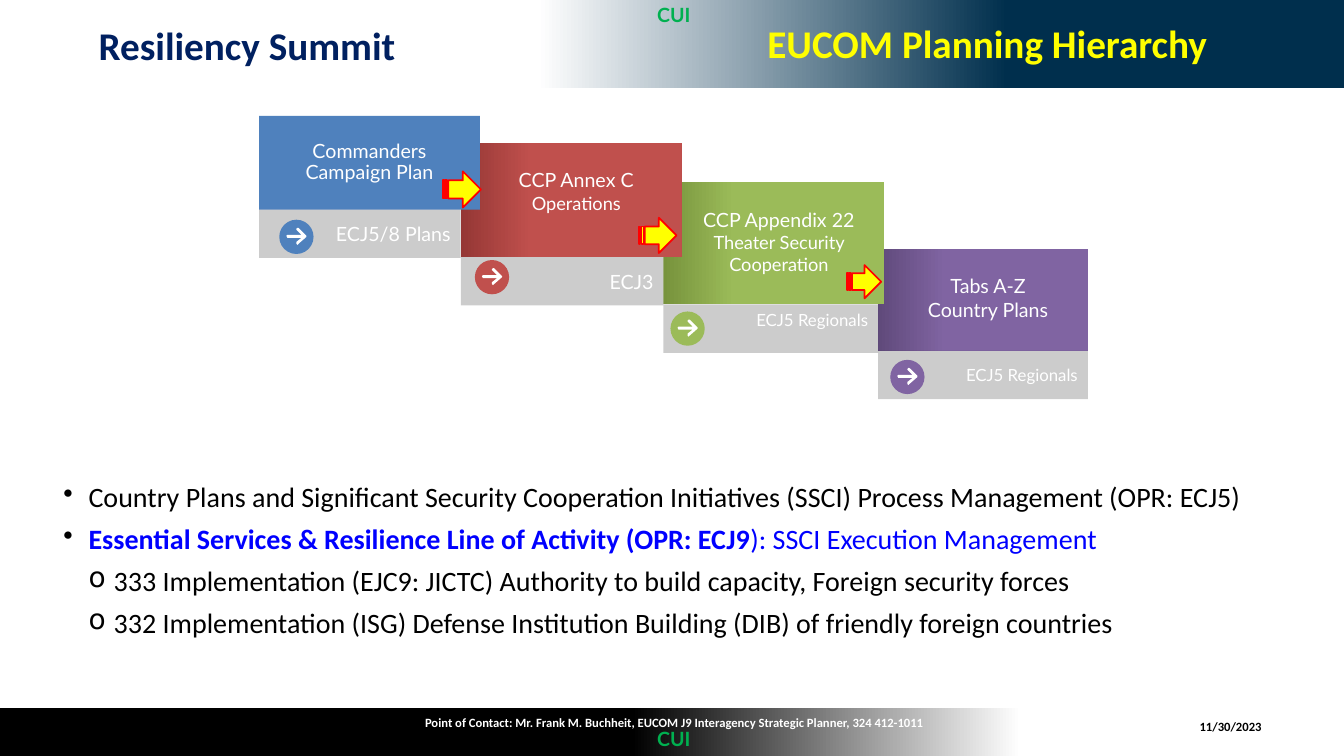
from lxml.etree import SubElement
from pptx import Presentation
from pptx.dml.color import RGBColor
from pptx.enum.shapes import MSO_SHAPE
from pptx.enum.text import MSO_ANCHOR, PP_ALIGN
from pptx.oxml.ns import qn
from pptx.util import Inches, Pt

# Content
WIDTH, HEIGHT = 13.33, 7.5
COLORS = {
    "white": "FFFFFF", "black": "000000", "navy": "002F4D", "heading": "002060",
    "yellow": "FFFF00", "red": "FF0000", "green": "00B050", "link": "0000FF",
    "plan": "4F81BD", "annex": "C0504D", "annex dark": "953735",
    "appendix": "9BBB59", "appendix dark": "77933C",
    "tabs": "8064A2", "tabs dark": "604A7B",
}
SUMMIT = "Resiliency Summit"
TITLE = "EUCOM Planning Hierarchy"
CONTACT = ("Point of Contact: Mr. Frank M. Buchheit, EUCOM J9 Interagency "
           "Strategic Planner, 324 412-1011")
DATE = "11/30/2023"
MARKING = "CUI"

# Each step: colour, card box, (line, size) pairs, owner, owner size, badge offset in bar
STEPS = [
    ("plan", (2.57, 1.15, 2.19, 0.93), [("Commanders Campaign Plan", 14)],
     "ECJ5/8 Plans", 14, (0.20, 0.10)),
    ("annex", (4.57, 1.42, 2.19, 1.13), [("CCP Annex C", 14), ("Operations", 13)],
     "ECJ3", 14, (0.14, 0.03)),
    ("appendix", (6.58, 1.81, 2.19, 1.21),
     [("CCP Appendix 22", 14), ("Theater Security Cooperation", 13)],
     "ECJ5 Regionals", 12, (0.07, 0.07)),
    ("tabs", (8.71, 2.47, 2.08, 1.01), [("Tabs A-Z", 14), ("Country Plans", 14)],
     "ECJ5 Regionals", 12, (0.12, 0.09)),
]
HANDOFFS = [(4.39, 1.70, 0.38, 0.36), (6.34, 2.16, 0.37, 0.35), (8.40, 2.63, 0.34, 0.33)]

# Each bullet: level, runs with their own format
BULLETS = [
    (0, [("Country Plans and Significant Security Cooperation Initiatives (SSCI) "
          "Process Management (OPR: ECJ5)", {})]),
    (0, [("Essential Services & Resilience Line of Activity (OPR: ECJ9",
          {"color": "link", "bold": True}),
         ("): SSCI Execution Management", {"color": "link"})]),
    (1, [("333 Implementation (EJC9: JICTC) Authority to build capacity, "
          "Foreign security forces", {})]),
    (1, [("332 Implementation (ISG) Defense Institution Building (DIB) of "
          "friendly foreign countries", {})]),
]
BULLET_MARKS = ["•", "o"]

BAR_HEIGHT = 0.48
BADGE = 0.34
# Badge arrow outline, in hundredths of an inch
BADGE_ARROW = [(0, 8.5), (1, 7.2), (15, 7.2), (9.8, 2.5), (9.8, 1), (11, 0), (12.3, 0.5),
               (20, 8), (20, 9), (12.3, 16.5), (11, 17), (9.8, 16), (9.8, 14.5),
               (15, 9.8), (1, 9.8)]

prs = Presentation()
prs.slide_width, prs.slide_height = Inches(WIDTH), Inches(HEIGHT)
slide = prs.slides.add_slide(prs.slide_layouts[5])
shapes = slide.shapes


def rgb(name):
    return RGBColor.from_string(COLORS[name])


def paint(shape, color, alpha=None):
    shape.shadow.inherit = False
    shape.line.fill.background()
    shape.fill.solid()
    shape.fill.fore_color.rgb = rgb(color)
    if alpha is not None:
        tint = shape.fill._xPr.find(".//" + qn("a:srgbClr"))
        SubElement(tint, qn("a:alpha"), val=str(alpha * 1000))
    return shape


def block(box, color, kind=MSO_SHAPE.RECTANGLE, alpha=None):
    return paint(shapes.add_shape(kind, *map(Inches, box)), color, alpha)


def blend(shape, stops, angle=0):
    shape.fill.gradient()
    shape.fill.gradient_angle = angle
    for stop, (position, color) in zip(shape.fill.gradient_stops, stops):
        stop.position = position
        stop.color.rgb = rgb(color)


def write(shape, paragraphs, size=14, font="Lato", color="white", bold=False,
          align=PP_ALIGN.LEFT, anchor=MSO_ANCHOR.TOP, insets=(0.1, 0.05, 0.1, 0.05),
          wrap=True, spacing=None, before=0, marks=None):
    """Fill a shape with paragraphs given as (level, [(text, run format), ...])."""
    frame = shape.text_frame
    frame.word_wrap, frame.vertical_anchor = wrap, anchor
    (frame.margin_left, frame.margin_top,
     frame.margin_right, frame.margin_bottom) = map(Inches, insets)
    for i, (level, runs) in enumerate(paragraphs):
        paragraph = frame.add_paragraph() if i else frame.paragraphs[0]
        paragraph.level, paragraph.alignment = level, align
        paragraph.space_before = Pt(before if i else 0)
        if spacing:
            paragraph.line_spacing = spacing
        if marks:
            props = paragraph._p.get_or_add_pPr()
            props.set("marL", str(Inches(0.25 * (level + 1))))
            props.set("indent", str(-Inches(0.25)))
            tint = SubElement(props, qn("a:buClr"))
            SubElement(tint, qn("a:srgbClr"), val=COLORS["black"])
            SubElement(props, qn("a:buChar"), char=marks[level])
        for text, own in runs:
            run = paragraph.add_run()
            run.text = text
            run.font.name = font
            run.font.size = Pt(own.get("size", size))
            run.font.bold = own.get("bold", bold)
            run.font.color.rgb = rgb(own.get("color", color))


def label(box, text, **style):
    write(shapes.add_textbox(*map(Inches, box)), [(0, [(text, {})])], **style)


# Bands and headings
footer_band = block((0, HEIGHT - 0.48, WIDTH, 0.48), "black")
blend(footer_band, [(0.24, "white"), (0.53, "black")], angle=180)
header_band = block((0, 0, WIDTH, 0.87), "navy")
blend(header_band, [(0.40, "white"), (0.75, "navy")])
label((0.88, 0.16, 5.8, 0.57), SUMMIT, size=28, font="Calibri", color="heading", bold=True)

title = shapes.title
shapes._spTree.append(title._element)  # bring in front of the bands
title.left, title.top, title.width, title.height = map(Inches, (6.67, 0.14, 5.4, 0.57))
write(title, [(0, [(TITLE, {})])], size=28, font="Calibri", color="yellow", bold=True,
      align=PP_ALIGN.RIGHT)

small = {"size": 9, "font": "Calibri", "bold": True, "align": PP_ALIGN.CENTER,
         "anchor": MSO_ANCHOR.MIDDLE}
label((11.08, 7.06, 2.25, 0.3), DATE, color="black", **small)
label((2.8, 7.02, 7.77, 0.3), CONTACT, insets=(0.07, 0.04, 0.07, 0.04), **small)

# Staircase: earlier steps lie over later ones, each bar reaches the next card
badges = []
for i, (color, box, lines, owner, owner_size, offset) in reversed(list(enumerate(STEPS))):
    left, top, width, height = box
    first = i == 0
    card = block(box, color)
    if not first:
        blend(card, [(0, color + " dark"), (0.32, color)])
    write(card, [(0, [(text, {"size": size})]) for text, size in lines],
          align=PP_ALIGN.CENTER, insets=(0.2 if first else 0.3, 0.25, 0.2, 0.25),
          spacing=0.9 if first else None)

    bar_top = top + height
    bar_width = STEPS[i + 1][1][0] - left if i + 1 < len(STEPS) else width
    bar = block((left, bar_top, bar_width, BAR_HEIGHT), "black", alpha=20)
    raised = color == "appendix"
    write(bar, [(0, [(owner, {})])], size=owner_size, align=PP_ALIGN.RIGHT,
          anchor=MSO_ANCHOR.TOP if raised else MSO_ANCHOR.MIDDLE,
          insets=(0.1, 0.05 if raised else 0.1, 0.1, 0.1))
    badges.append((left + offset[0], bar_top + offset[1], color))

for left, top, color in badges:
    block((left, top, BADGE, BADGE), color, MSO_SHAPE.OVAL)
    outline = shapes.build_freeform(*BADGE_ARROW[0], scale=Inches(0.01))
    outline.add_line_segments(BADGE_ARROW[1:], close=True)
    paint(outline.convert_to_shape(Inches(left + 0.07), Inches(top + 0.08)), "white")

for box in HANDOFFS:
    handoff = block(box, "yellow", MSO_SHAPE.STRIPED_RIGHT_ARROW)
    handoff.line.color.rgb = rgb("red")
    handoff.line.width = Pt(1.25)

# Bullets and markings
write(shapes.add_textbox(*map(Inches, (0.53, 4.71, 12.06, 2.09))), BULLETS, size=20,
      font="Calibri", color="black", before=6, marks=BULLET_MARKS)
for top in (0.01, HEIGHT - 0.31):
    label((6.43, top, 0.47, 0.31), MARKING, color="green", bold=True, wrap=False,
          align=PP_ALIGN.RIGHT, insets=(0.05,) * 4, spacing=0.9)

prs.save("out.pptx")
